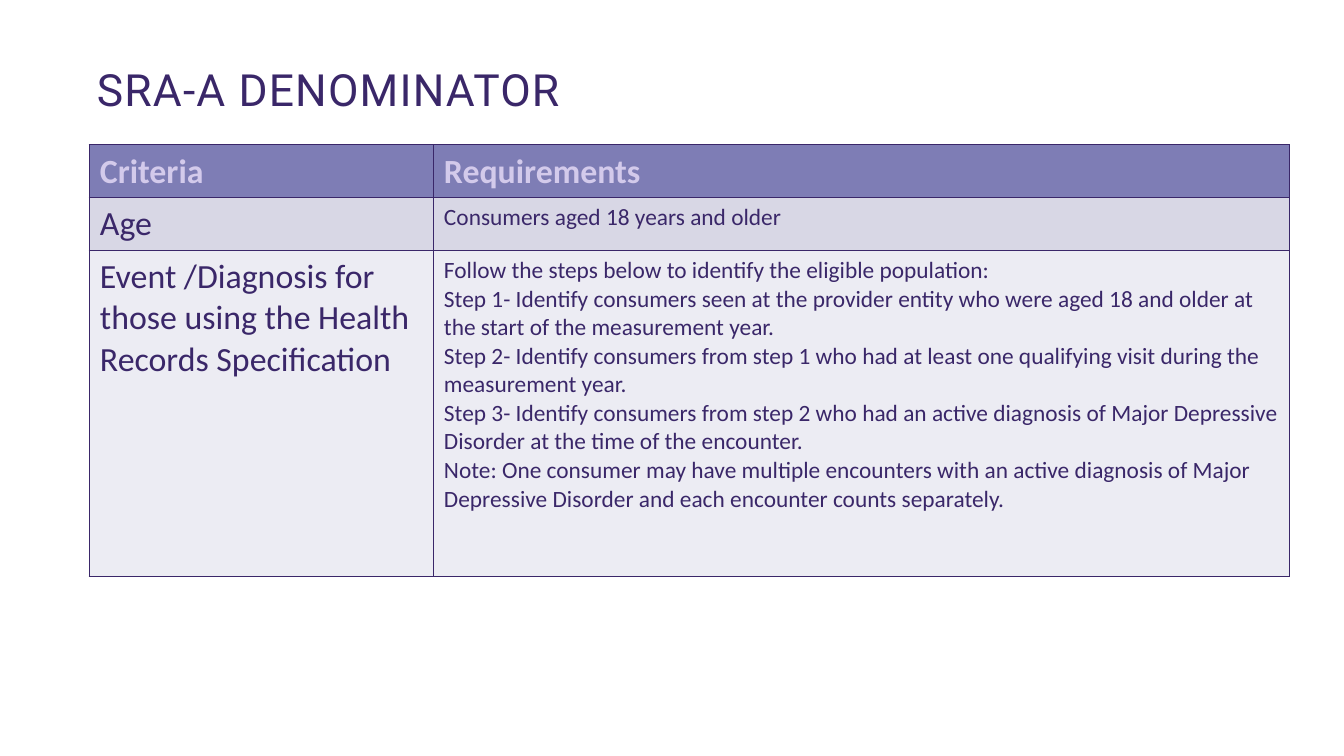
from pptx import Presentation
from pptx.dml.color import RGBColor
from pptx.enum.text import MSO_ANCHOR, PP_ALIGN
from pptx.oxml import parse_xml
from pptx.oxml.ns import nsdecls
from pptx.util import Pt

TOP, LEFT = MSO_ANCHOR.TOP, PP_ALIGN.LEFT
INK = RGBColor(0x3A, 0x27, 0x69)
PALE = RGBColor(0xD3, 0xCA, 0xEB)
HEAD = RGBColor(0x7E, 0x7D, 0xB5)
BAND = RGBColor(0xD8, 0xD7, 0xE5)
LIGHT = RGBColor(0xEC, 0xEC, 0xF3)
PX = 914400 // 84

TITLE = "SRA-A DENOMINATOR"
ROWS = [
    (["Criteria"], ["Requirements"]),
    (["Age"], ["Consumers aged 18 years and older"]),
    (
        ["Event /Diagnosis for those using the Health Records Specification"],
        [
            "Follow the steps below to identify the eligible population:",
            "Step 1- Identify consumers seen at the provider entity who were aged 18 "
            "and older at the start of the measurement year.",
            "Step 2- Identify consumers from step 1 who had at least one qualifying "
            "visit during the measurement year.",
            "Step 3- Identify consumers from step 2 who had an active diagnosis of "
            "Major Depressive Disorder at the time of the encounter.",
            "Note: One consumer may have multiple encounters with an active diagnosis "
            "of Major Depressive Disorder and each encounter counts separately.",
        ],
    ),
]
FILLS = [HEAD, BAND, LIGHT]
WIDTHS = [344, 857]
HEIGHTS = [52, 52, 326]
LEFT_X, TITLE_Y, TABLE_Y = 89, 62, 145


def write(frame, lines, size, font="Calibri", color=INK, bold=False,
          space=None, track=None):
    frame.word_wrap = True
    for i, line in enumerate(lines):
        para = frame.paragraphs[0] if i == 0 else frame.add_paragraph()
        para.alignment = LEFT
        if space:
            para.line_spacing = space
        run = para.add_run()
        run.text = line
        run.font.name = font
        run.font.size = Pt(size)
        run.font.bold = bold
        run.font.color.rgb = color
        if track:
            run.font._element.set("spc", str(track))


def pad(box, side, top):
    box.margin_left = box.margin_right = side * PX
    box.margin_top = box.margin_bottom = top * PX
    box.vertical_anchor = TOP


def edge(cell):
    """Draw a thin line on all four sides of a cell."""
    props = cell._tc.get_or_add_tcPr()
    for i, side in enumerate(("lnL", "lnR", "lnT", "lnB")):
        props.insert(i, parse_xml(
            f'<a:{side} {nsdecls("a")} w="12700"><a:solidFill>'
            f'<a:srgbClr val="{INK}"/></a:solidFill></a:{side}>'))


def main():
    deck = Presentation()
    deck.slide_width, deck.slide_height = 16 * 84 * PX, 9 * 84 * PX
    slide = deck.slides.add_slide(deck.slide_layouts[6])

    title = slide.shapes.add_textbox(
        LEFT_X * PX, TITLE_Y * PX, 1008 * PX, 129 * PX).text_frame
    pad(title, 8, 6)
    write(title, [TITLE], 38, font="Roboto", space=0.9, track=100)

    table = slide.shapes.add_table(
        len(ROWS), len(WIDTHS), LEFT_X * PX, TABLE_Y * PX,
        sum(WIDTHS) * PX, sum(HEIGHTS) * PX).table
    for col, width in zip(table.columns, WIDTHS):
        col.width = width * PX
    for r, row in enumerate(ROWS):
        table.rows[r].height = HEIGHTS[r] * PX
        for c, lines in enumerate(row):
            cell = table.cell(r, c)
            pad(cell, 11, 6)
            cell.fill.solid()
            cell.fill.fore_color.rgb = FILLS[r]
            edge(cell)
            head = r == 0
            write(cell.text_frame, lines, 29 if head or c == 0 else 20,
                  color=PALE if head else INK, bold=head)

    deck.save("out.pptx")


if __name__ == "__main__":
    main()
